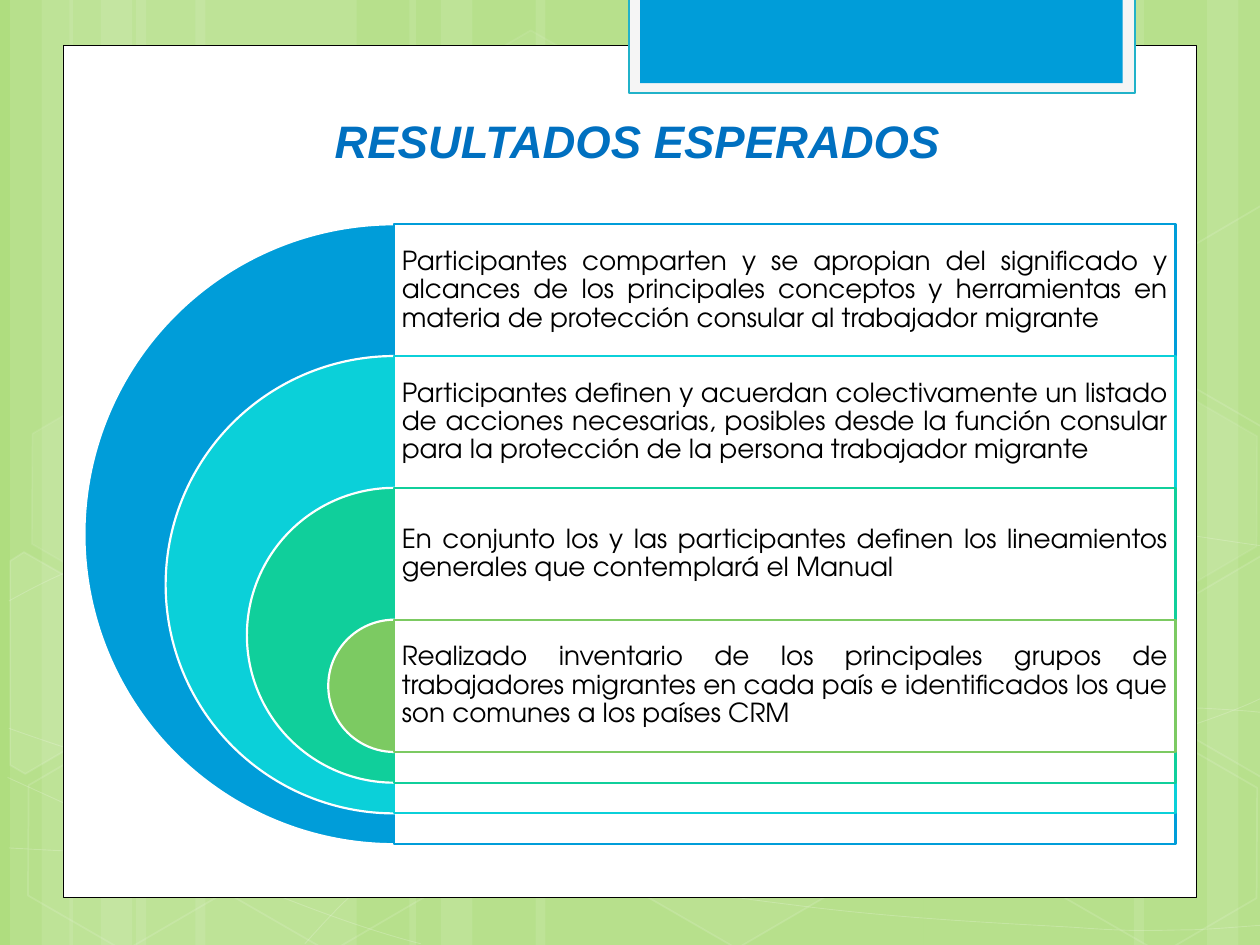
from math import cos, radians, sin

from lxml import etree
from pptx import Presentation
from pptx.dml.color import RGBColor
from pptx.enum import shapes, text
from pptx.oxml.ns import qn
from pptx.util import Cm, Pt

WHITE = RGBColor(0xFF, 0xFF, 0xFF)
BLACK = RGBColor(0, 0, 0)
BACKGROUND = RGBColor(0xAF, 0xDD, 0x7F)
TAB_FRAME = RGBColor(0xF5, 0xF5, 0xF5)
TAB_LINE = RGBColor(0x21, 0xB2, 0xC9)
TITLE_BLUE = RGBColor(0x00, 0x70, 0xC0)
BLUE = RGBColor(0x00, 0x9D, 0xD9)
CYAN = RGBColor(0x0B, 0xD0, 0xD9)
TEAL = RGBColor(0x10, 0xCF, 0x9B)
GREEN = RGBColor(0x7C, 0xCA, 0x62)

TITLE = "RESULTADOS ESPERADOS"
RESULTS = [
    (BLUE, "Participantes comparten y se apropian del significado y alcances de los principales "
           "conceptos y herramientas en materia de protección consular al trabajador migrante"),
    (CYAN, "Participantes definen y acuerdan colectivamente un listado de acciones necesarias, "
           "posibles desde la función consular para la protección de la persona trabajador migrante"),
    (TEAL, "En conjunto los y las participantes definen los lineamientos generales que "
           "contemplará el Manual"),
    (GREEN, "Realizado inventario de los principales grupos de trabajadores migrantes en cada "
            "país e identificados los que son comunes a los países CRM"),
]

# All positions are in grid units; the slide is 10 by 7.5 of them.
UNIT = Cm(2.54)
SLIDE_WIDTH, SLIDE_HEIGHT = 10, 7.5

# Left edge, width
STRIPES = [(1.08, 1.75), (0.08, 0.5), (0.33, 0.83), (1.55, 1.75), (0.55, 0.5), (0.8, 0.83),
           (7.33, 1.75), (9.58, 0.5), (9, 0.83), (4.25, 3.08), (3.25, 0.5), (3.5, 0.83)]

# Start point, then two control points and an end point for each cubic segment
CURVES = [
    [(0.07, 6.73), (0.61, 6.76), (1.15, 6.79), (1.9, 6.78), (2.65, 6.77), (3.58, 6.75),
     (4.58, 6.65), (5.58, 6.55), (7, 6.36), (7.92, 6.17), (8.83, 5.98), (9.77, 5.68),
     (10.07, 5.51)],
    [(0.07, 4.77), (0.36, 4.61), (0.65, 4.46), (1.21, 4.31), (1.78, 4.16), (2.59, 3.94),
     (3.47, 3.87), (4.36, 3.8), (5.44, 3.79), (6.54, 3.87), (7.64, 3.95), (9.47, 4.26),
     (10.07, 4.34)],
    [(0.06, 6.17), (1.27, 6.72), (2.47, 7.27), (3.34, 7.49)],
    [(0.07, 5.78), (0.38, 5.89), (0.7, 6), (1.28, 6.16), (1.86, 6.31), (2.73, 6.56),
     (3.57, 6.73), (4.4, 6.9), (5.45, 7.08), (6.28, 7.18), (7.11, 7.29), (8, 7.33),
     (8.53, 7.36), (9.05, 7.4), (9.19, 7.38), (9.45, 7.38), (9.71, 7.37), (9.89, 7.35),
     (10.07, 7.34)],
    [(2.42, 7.49), (2.6, 7.29), (2.78, 7.09), (3.02, 6.91), (3.26, 6.73), (3.6, 6.53),
     (3.88, 6.39), (4.16, 6.25), (4.33, 6.19), (4.7, 6.09), (5.06, 5.99), (5.73, 5.85),
     (6.08, 5.78), (6.44, 5.71), (6.49, 5.71), (6.8, 5.69), (7.11, 5.66), (7.6, 5.63),
     (7.94, 5.62), (8.29, 5.61), (8.86, 5.62), (8.86, 5.62), (9.08, 5.62), (9.31, 5.62),
     (9.53, 5.62), (9.71, 5.63), (9.88, 5.64), (9.97, 5.65), (10.06, 5.66), (10.03, 5.65),
     (10.06, 5.66)],
]

TILT = 30
# Left, top, fill opacity, line opacity (percent)
HEXAGONS = [(3.34, 0.36, 4, 8), (4.97, 5.89, 6, 12), (0.11, 5.91, 0, 12), (0.14, 3.12, 7, 8),
            (1.74, 5.92, 0, 12), (7.53, 4.53, 10, 12), (8.34, 5.93, 0, 12), (8.34, 3.14, 7, 8)]

# Centre, corners as they stand after the tilt, fill opacity
CUT_HEXAGONS = [
    ((0.36, 5.35), [(0.08, 4.45), (0.19, 4.38), (0.96, 4.82), (0.95, 5.7), (0.2, 6.14),
                    (0.08, 6.07)], 10),
    ((9.85, 5.2), [(9.26, 4.85), (10.01, 4.41), (10.09, 4.46), (10.09, 6.13), (10.02, 6.17),
                   (9.26, 5.73)], 4),
    ((9.85, 2.41), [(9.26, 2.07), (10.01, 1.63), (10.1, 1.68), (10.09, 3.35), (10.02, 3.39),
                    (9.26, 2.95)], 0),
]

CENTRE_X, ROWS_TOP, ROWS_WIDTH = 3.13, 1.78, 6.2
ROW_HEIGHT, OUTER_DIAMETER, DIAMETER_STEP = 1.046, 4.92, 1.29


def units(*values):
    return [round(value * UNIT) for value in values]


def set_opacity(fill, percent):
    colour = fill._xPr.find(qn("a:solidFill"))[0]
    etree.SubElement(colour, qn("a:alpha")).set("val", str(percent * 1000))


def style(shape, fill=None, opacity=100, line=None, width=1.25, line_opacity=100):
    shape.shadow.inherit = False
    for target, colour, percent in ((shape.fill, fill, opacity),
                                    (shape.line.fill, line, line_opacity)):
        if colour is None or percent == 0:
            target.background()
            continue
        target.solid()
        target.fore_color.rgb = colour
        if percent < 100:
            set_opacity(target, percent)
    if line is not None:
        shape.line.width = Pt(width)


def add_preset(slide, kind, box, **look):
    shape = slide.shapes.add_shape(kind, *units(*box))
    style(shape, **look)
    return shape


def add_outline(slide, points, close, **look):
    start, *others = [units(*point) for point in points]
    builder = slide.shapes.build_freeform(*start)
    builder.add_line_segments(others, close=close)
    shape = builder.convert_to_shape()
    style(shape, **look)
    return shape


def bend(shape):
    """Turn each three line segments of the outline into one cubic segment."""
    path = next(shape._element.iter(qn("a:path")))
    segments = path.findall(qn("a:lnTo"))
    for first in range(0, len(segments), 3):
        cubic = etree.SubElement(path, qn("a:cubicBezTo"))
        for segment in segments[first:first + 3]:
            cubic.append(segment[0])
            path.remove(segment)


def untilt(point, centre):
    x, y = point[0] - centre[0], point[1] - centre[1]
    cosine, sine = cos(radians(TILT)), sin(radians(TILT))
    return centre[0] + x * cosine + y * sine, centre[1] - x * sine + y * cosine


def add_backdrop(slide):
    rectangle = shapes.MSO_SHAPE.RECTANGLE
    slide.background.fill.solid()
    slide.background.fill.fore_color.rgb = BACKGROUND
    for left, width in STRIPES:
        add_preset(slide, rectangle, (left, 0, width, SLIDE_HEIGHT), fill=WHITE, opacity=10)
    for curve in CURVES:
        bend(add_outline(slide, curve, False, line=WHITE, width=0.5, line_opacity=20))
    for left, top, opacity, line_opacity in HEXAGONS:
        hexagon = add_preset(slide, shapes.MSO_SHAPE.HEXAGON, (left, top, 1.75, 1.52), fill=WHITE,
                             opacity=opacity, line=WHITE, width=1, line_opacity=line_opacity)
        hexagon.adjustments[0] = 0.285
        hexagon.rotation = TILT
    for centre, corners, opacity in CUT_HEXAGONS:
        hexagon = add_outline(slide, [untilt(corner, centre) for corner in corners], True,
                              fill=WHITE, opacity=opacity, line=WHITE, width=1, line_opacity=12)
        hexagon.rotation = TILT
    add_preset(slide, rectangle, (0.5, 0.36, 9, 6.76), fill=WHITE, line=BLACK, width=0.5)
    add_preset(slide, rectangle, (4.99, -0.02, 4.02, 0.76), fill=TAB_FRAME, line=TAB_LINE)
    add_preset(slide, rectangle, (5.08, -0.02, 3.83, 0.68), fill=BLUE)


def write(frame, wording, alignment, font_name, size, colour, bold=False, italic=False):
    frame.word_wrap = True
    paragraph = frame.paragraphs[0]
    paragraph.alignment = alignment
    run = paragraph.add_run()
    run.text = wording
    font = run.font
    font.name, font.size, font.bold, font.italic = font_name, Pt(size), bold, italic
    font.color.rgb = colour
    return paragraph


def add_title(slide):
    title = slide.shapes.title
    slide.shapes._spTree.append(title._element)  # in front of the backdrop
    title.left, title.top, title.width, title.height = units(1.22, 0.84, 7.68, 0.54)
    title.text_frame.vertical_anchor = text.MSO_ANCHOR.BOTTOM
    title.text_frame.auto_size = text.MSO_AUTO_SIZE.SHAPE_TO_FIT_TEXT
    write(title.text_frame, TITLE, text.PP_ALIGN.CENTER, "Arial", 26, TITLE_BLUE, True, True)


def add_result(slide, index, colour, wording):
    top = ROWS_TOP + index * ROW_HEIGHT
    diameter = OUTER_DIAMETER - index * DIAMETER_STEP
    half_disc = add_preset(slide, shapes.MSO_SHAPE.PIE,
                           (CENTRE_X - diameter / 2, top, diameter, diameter),
                           fill=colour, line=WHITE)
    half_disc.adjustments[0], half_disc.adjustments[1] = 54, 162  # 90 to 270 degrees
    add_preset(slide, shapes.MSO_SHAPE.RECTANGLE, (CENTRE_X, top, ROWS_WIDTH, diameter),
               fill=WHITE, opacity=90, line=colour)
    frame = slide.shapes.add_textbox(*units(CENTRE_X, top, ROWS_WIDTH, ROW_HEIGHT)).text_frame
    frame.margin_left = frame.margin_right = frame.margin_top = frame.margin_bottom = Cm(0.15)
    frame.vertical_anchor = text.MSO_ANCHOR.MIDDLE
    paragraph = write(frame, wording, text.PP_ALIGN.JUSTIFY, "TeX Gyre Adventor", 15, BLACK)
    paragraph.line_spacing = 0.9


def main():
    presentation = Presentation()
    presentation.slide_width, presentation.slide_height = units(SLIDE_WIDTH, SLIDE_HEIGHT)
    slide = presentation.slides.add_slide(presentation.slide_layouts[5])
    add_backdrop(slide)
    add_title(slide)
    for index, (colour, wording) in enumerate(RESULTS):
        add_result(slide, index, colour, wording)
    presentation.save("out.pptx")


if __name__ == "__main__":
    main()
